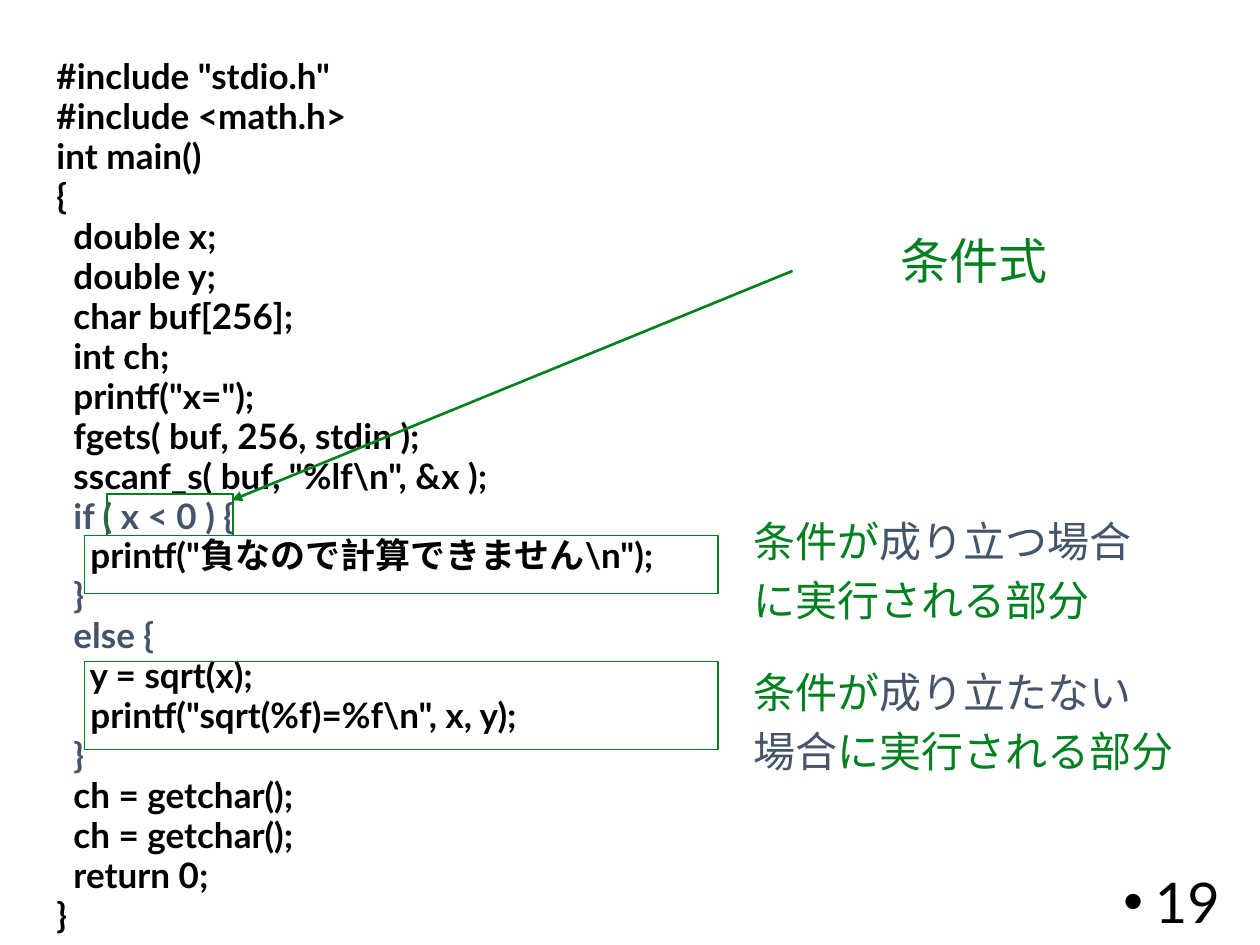
from lxml import etree
from pptx import Presentation
from pptx.dml.color import RGBColor
from pptx.enum.shapes import MSO_CONNECTOR, MSO_SHAPE
from pptx.enum.text import MSO_ANCHOR, PP_ALIGN
from pptx.oxml.ns import qn
from pptx.util import Inches, Pt

COLORS = {"code": "000000", "keyword": "44546A", "note": "00801E"}
FONT = "Lato"

prs = Presentation()
prs.slide_width, prs.slide_height = Inches(10), Inches(7.5)
COL, ROW = prs.slide_width / 100, prs.slide_height / 100
s = prs.slides.add_slide(prs.slide_layouts[6])


def grid(*cells):
    """Turn alternating column and row counts into lengths."""
    return [round(n * (ROW if i % 2 else COL)) for i, n in enumerate(cells)]


def add_text(cells, lines, size, bold=False, spacing=None, before=None):
    """Text box; each line is a list of (text, colour name) runs."""
    tf = s.shapes.add_textbox(*grid(*cells)).text_frame
    tf.word_wrap = True
    for i, line in enumerate(lines):
        p = tf.paragraphs[0] if i == 0 else tf.add_paragraph()
        p.line_spacing = spacing
        if i and before:
            p.space_before = Pt(before)
        for text, color in line:
            r = p.add_run()
            r.text = text
            r.font.name, r.font.size, r.font.bold = FONT, Pt(size), bold
            r.font.color.rgb = RGBColor.from_string(COLORS[color])
    return tf


# Program listing, with the branch keywords in their own colour
code = r'''#include "stdio.h"
#include <math.h>
int main()
{
  double x;
  double y;
  char buf[256];
  int ch;
  printf("x=");
  fgets( buf, 256, stdin );
  sscanf_s( buf, "%lf\n", &x );
  if ( x < 0 ) {
    printf("負なので計算できません\n");
  }
  else {
    y = sqrt(x);
    printf("sqrt(%f)=%f\n", x, y);
  }
  ch = getchar();
  ch = getchar();
  return 0;
}'''
branch = ("  if", "  else", "  }")
add_text((3.5, 5.47, 85.7, 95.2),
         [[(line, "keyword" if line.startswith(branch) else "code")]
          for line in code.split("\n")],
         20, bold=True, spacing=0.95)

# Frames: condition, then-part, else-part
for cells in ((8.5, 52.27, 10, 4.4),
              (6.7, 56.67, 50.3, 6.13),
              (6.7, 70, 50.3, 9.33)):
    sp = s.shapes.add_shape(MSO_SHAPE.RECTANGLE, *grid(*cells))
    sp.shadow.inherit = False
    sp.fill.background()
    sp.line.color.rgb = RGBColor.from_string(COLORS["note"])
    sp.line.width = Pt(0.75)

# Arrow from the label to the condition
arrow = s.shapes.add_connector(MSO_CONNECTOR.STRAIGHT,
                               *grid(62.9, 28.67, 18.4, 52.93))
arrow.line.color.rgb = RGBColor.from_string(COLORS["note"])
arrow.line.width = Pt(1.5)
etree.SubElement(arrow.line._get_or_add_ln(), qn("a:tailEnd"), type="triangle")
etree.SubElement(arrow._element.spPr, qn("a:effectLst"))

# Explanations
add_text((70.5, 23.73, 15, 7.6), [[("条件式", "note")]], 28)
add_text((58.8, 53.87, 36, 13.87),
         [[("条件が", "note"), ("成り立つ場合", "keyword")],
          [("に実行される部分", "note")]], 24, before=4.8)
add_text((58.8, 69.87, 36, 13.87),
         [[("条件が", "note"), ("成り立たない", "keyword")],
          [("場合", "keyword"), ("に実行される部分", "note")]], 24, before=4.8)

# Page number with its bullet
tf = add_text((75.3, 92.67, 22.5, 5.33), [[("19", "code")]], 32)
tf.vertical_anchor = MSO_ANCHOR.MIDDLE
p = tf.paragraphs[0]
p.alignment = PP_ALIGN.RIGHT
pPr = p._p.get_or_add_pPr()
pPr.set("marL", str(Inches(0.25)))
pPr.set("indent", str(-Inches(0.25)))
etree.SubElement(pPr, qn("a:buFont"), typeface="Arial")
etree.SubElement(pPr, qn("a:buChar"), char="•")

prs.save("out.pptx")
